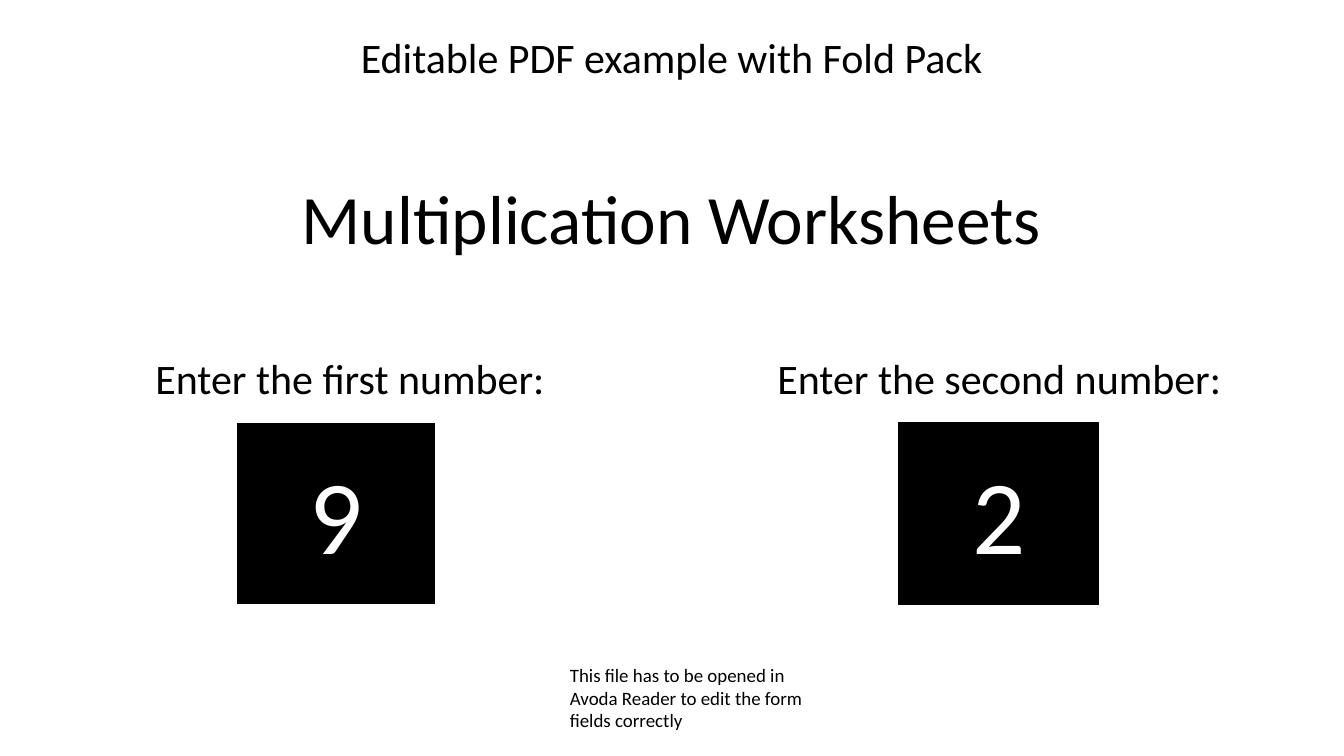
from pptx import Presentation
from pptx.dml.color import RGBColor
from pptx.enum.shapes import MSO_SHAPE
from pptx.enum.text import MSO_ANCHOR, MSO_AUTO_SIZE, PP_ALIGN
from pptx.util import Emu, Pt

BLACK = RGBColor(0, 0, 0)
WHITE = RGBColor(255, 255, 255)
FONT = "Calibri"
PX = 9144
SLIDE_W, SLIDE_H = 1778, 1000

TITLE = ("Multiplication Worksheets", (286, 227, 1205, 121), 66)
HEADER = ("Editable PDF example with Fold Pack", (286, 37, 1205, 77), 40)
NOTE = ("This file has to be opened in Avoda Reader to edit the form fields correctly",
        (744, 873, 362, 101), 18)
NUMBERS = [
    dict(prompt="Enter the first number:", value="9", prompt_x=141,
         box_x=313, value_x=324, value_w=241, line=WHITE, line_w=1.5),
    dict(prompt="Enter the second number:", value="2", prompt_x=1000,
         box_x=1189, value_x=1203, value_w=238, line=BLACK, line_w=1),
]


def emu(box):
    return [Emu(v * PX) for v in box]


def write(sp, text, size, color=BLACK, align=PP_ALIGN.CENTER):
    tf = sp.text_frame
    tf.word_wrap = True
    tf.auto_size = MSO_AUTO_SIZE.SHAPE_TO_FIT_TEXT
    tf.vertical_anchor = MSO_ANCHOR.TOP
    p = tf.paragraphs[0]
    p.text = text
    p.alignment = align
    p.font.name = FONT
    p.font.size = Pt(size)
    p.font.color.rgb = color


def add_text(slide, text, box, size, **style):
    write(slide.shapes.add_textbox(*emu(box)), text, size, **style)


def add_number_box(slide, number):
    sp = slide.shapes.add_shape(MSO_SHAPE.RECTANGLE, *emu((number["box_x"], 559, 264, 241)))
    sp.shadow.inherit = False
    sp.fill.solid()
    sp.fill.fore_color.rgb = BLACK
    sp.line.color.rgb = number["line"]
    sp.line.width = Pt(number["line_w"])


def main():
    prs = Presentation()
    prs.slide_width, prs.slide_height = emu((SLIDE_W, SLIDE_H))
    slide = prs.slides.add_slide(prs.slide_layouts[5])

    text, box, size = TITLE
    title = slide.shapes.title
    title.left, title.top, title.width, title.height = emu(box)
    write(title, text, size)

    add_text(slide, *HEADER)
    for number in NUMBERS:
        add_number_box(slide, number)
        add_text(slide, number["value"], (number["value_x"], 590, number["value_w"], 178),
                 100, color=WHITE)
        add_text(slide, number["prompt"], (number["prompt_x"], 461, 644, 77), 40)
    add_text(slide, *NOTE, align=PP_ALIGN.LEFT)

    prs.save("out.pptx")


if __name__ == "__main__":
    main()
